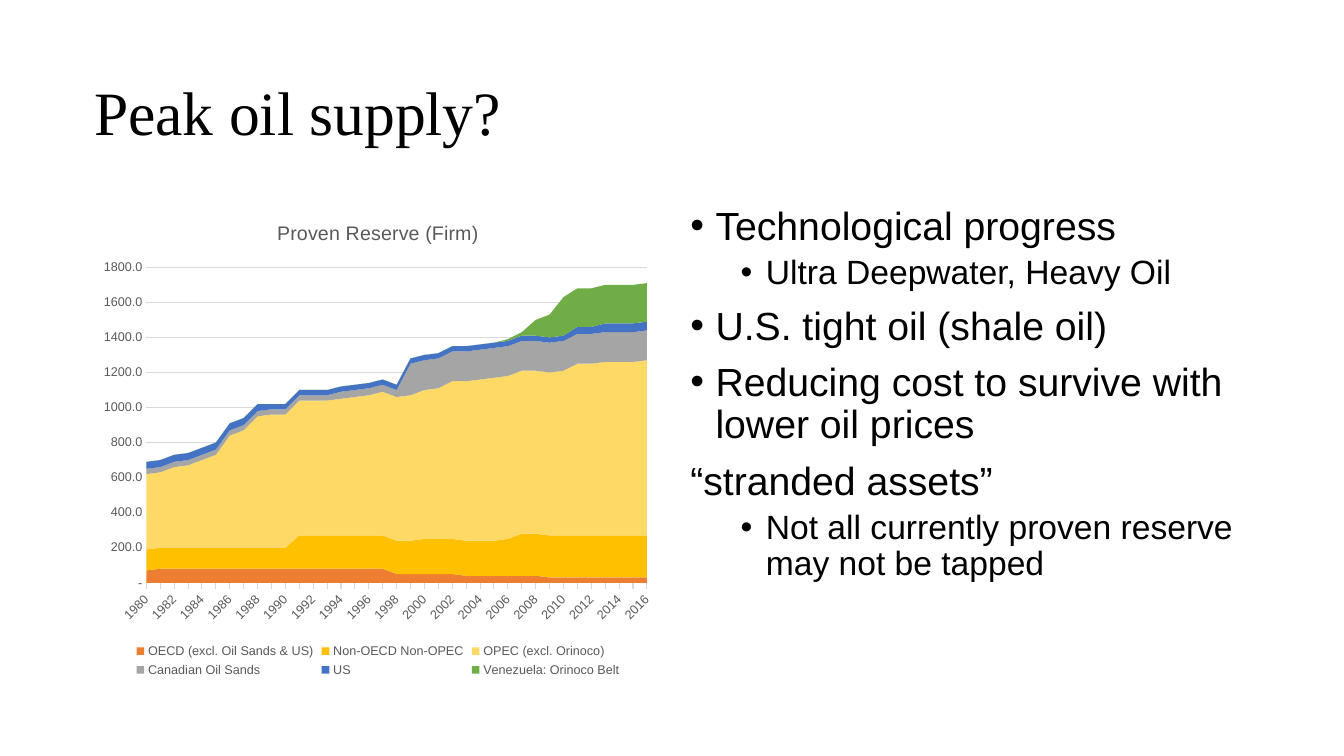
from pptx import Presentation
from pptx import util as u
from pptx.chart import data
from pptx.dml import color
from pptx.enum import chart as ch, text
from pptx.oxml import xmlchemy as xc

Pt = u.Pt
RGB = color.RGBColor
BLACK = RGB(0, 0, 0)
GREY = RGB(0x59, 0x59, 0x59)
PALE = RGB(0xD9, 0xD9, 0xD9)

HEAD = "Peak oil supply?"
POINTS = [
    (0, True, "Technological progress"),
    (1, True, "Ultra Deepwater, Heavy Oil"),
    (0, True, "U.S. tight oil (shale oil)"),
    (0, True, "Reducing cost to survive with lower oil prices"),
    (0, False, "“stranded assets”"),
    (1, True, "Not all currently proven reserve may not be tapped"),
]
LEVELS = [(28, 10, 18), (24, 5, 54)]
CAPTION = "Proven Reserve (Firm)"
YEARS = [str(year) for year in range(1980, 2017)]
SERIES = [
    ("OECD (excl. Oil Sands & US)", RGB(0xED, 0x7D, 0x31),
     [70] + [80] * 17 + [50] * 5 + [40] * 6 + [30] * 8),
    ("Non-OECD Non-OPEC", RGB(0xFF, 0xC0, 0x00),
     [120] * 11 + [190] * 9 + [200] * 6 + [210] + [240] * 10),
    ("OPEC (excl. Orinoco)", RGB(0xFF, 0xD9, 0x66),
     [430, 430, 460, 470, 500, 530, 640, 670, 750, 760, 760, 770, 770,
      770, 780, 790, 800, 820, 820, 830, 850, 860, 900, 910, 920, 930,
      930, 930, 930, 930, 940, 980, 980, 990, 990, 990, 1000]),
    ("Canadian Oil Sands", RGB(0xA5, 0xA5, 0xA5),
     [30] * 14 + [40] * 5 + [180] + [170] * 17),
    ("US", RGB(0x44, 0x72, 0xC4),
     [40] * 9 + [30] * 22 + [40] * 2 + [50] * 4),
    ("Venezuela: Orinoco Belt", RGB(0x70, 0xAD, 0x47),
     [None] * 26 + [10, 20, 90, 130] + [220] * 7),
]


def style(font, size, tint, name="Arial"):
    font.size = Pt(size)
    font.color.rgb = tint
    font.name = name
    font.bold = False


def add_head(slide):
    head = slide.shapes.title
    head.left, head.top, head.width, head.height = map(Pt, (60, 30, 828, 104.4))
    frame = head.text_frame
    frame.vertical_anchor = text.MSO_ANCHOR.MIDDLE
    para = frame.paragraphs[0]
    para.alignment = text.PP_ALIGN.LEFT
    para.line_spacing = 0.9
    run = para.add_run()
    run.text = HEAD
    style(run.font, 44, BLACK, "Times New Roman")


def add_dot(para, left):
    props = para._p.get_or_add_pPr()
    props.set("marL", str(Pt(left)))
    props.set("indent", str(Pt(-18)))
    for tag, key, value in (("a:buFont", "typeface", "Arial"),
                            ("a:buChar", "char", "•")):
        mark = xc.OxmlElement(tag)
        mark.set(key, value)
        props.append(mark)


def add_points(slide):
    box = slide.shapes.add_textbox(Pt(486), Pt(144), Pt(408), Pt(342.6))
    frame = box.text_frame
    frame.word_wrap = True
    for i, (level, dot, words) in enumerate(POINTS):
        para = frame.add_paragraph() if i else frame.paragraphs[0]
        size, gap, left = LEVELS[level]
        para.level = level
        para.line_spacing = 0.9
        para.space_before = Pt(gap)
        if dot:
            add_dot(para, left)
        run = para.add_run()
        run.text = words
        style(run.font, size, BLACK)


def add_graph(slide):
    table = data.CategoryChartData()
    table.categories = YEARS
    for name, tint, vals in SERIES:
        table.add_series(name, vals)
    chart = slide.shapes.add_chart(
        ch.XL_CHART_TYPE.AREA_STACKED,
        Pt(66), Pt(144), Pt(408), Pt(342.6), table).chart
    style(chart.font, 10, BLACK)

    chart.has_title = True
    chart.chart_title.include_in_layout = False
    run = chart.chart_title.text_frame.paragraphs[0].add_run()
    run.text = CAPTION
    style(run.font, 14, GREY)

    chart.has_legend = True
    chart.legend.position = ch.XL_LEGEND_POSITION.BOTTOM
    chart.legend.include_in_layout = False
    style(chart.legend.font, 9, GREY)

    for band, (name, tint, vals) in zip(chart.plots[0].series, SERIES):
        band.format.fill.solid()
        band.format.fill.fore_color.rgb = tint
        band.format.line.fill.background()

    years = chart.category_axis
    years.has_major_gridlines = False
    years.major_tick_mark = ch.XL_TICK_MARK.OUTSIDE
    years.format.line.color.rgb = PALE
    years.format.line.width = Pt(0.75)
    style(years.tick_labels.font, 9, GREY)
    years._element.txPr.find("{*}bodyPr").set("rot", "-2700000")

    scale = chart.value_axis
    scale.minimum_scale, scale.maximum_scale, scale.major_unit = 0, 1800, 200
    scale.major_tick_mark = ch.XL_TICK_MARK.NONE
    scale.format.line.fill.background()
    scale.has_major_gridlines = True
    grid = scale.major_gridlines.format.line
    grid.color.rgb = PALE
    grid.width = Pt(0.75)
    style(scale.tick_labels.font, 9, GREY)
    scale.tick_labels.number_format = r"[>0.05]0.0;[=0]\-;\^"
    scale.tick_labels.number_format_is_linked = False


def main():
    deck = Presentation()
    deck.slide_width, deck.slide_height = Pt(960), Pt(540)
    slide = deck.slides.add_slide(deck.slide_layouts[5])
    add_head(slide)
    add_points(slide)
    add_graph(slide)
    deck.save("out.pptx")


if __name__ == "__main__":
    main()
